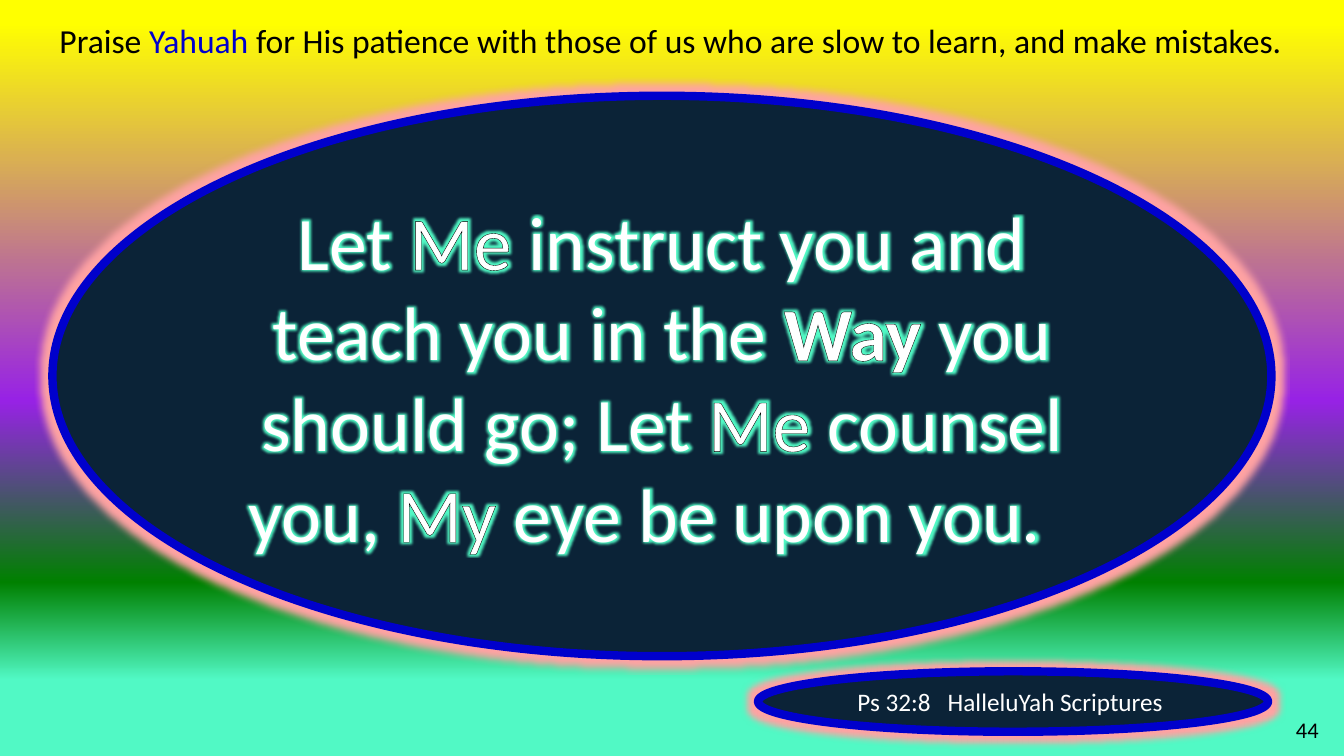
from dataclasses import dataclass

from lxml import etree
from pptx import Presentation
from pptx.dml.color import RGBColor
from pptx.enum.shapes import MSO_SHAPE
from pptx.enum.text import MSO_ANCHOR, PP_ALIGN
from pptx.oxml import parse_xml
from pptx.oxml.ns import nsdecls, qn
from pptx.util import Inches, Pt

ELLIPSE = MSO_SHAPE.OVAL
ROUNDED = MSO_SHAPE.ROUNDED_RECTANGLE
MIDDLE = MSO_ANCHOR.MIDDLE
CENTER = PP_ALIGN.CENTER
RIGHT = PP_ALIGN.RIGHT


@dataclass(frozen=True)
class Theme:
    font: str = "Calibri"
    navy: str = "0B2337"
    blue: str = "0000CC"
    white: str = "FFFFFF"
    black: str = "000000"
    mint: str = "51F9C5"
    pink: str = "FFA3A3"
    sky: tuple = ((3, "FFFF00"), (53, "9722E5"), (77, "008000"), (90, "51F9C5"))
    verse_size: int = 54
    praise_size: int = 24
    source_size: int = 18
    number_size: int = 16
    border: int = 6
    outline: float = 0.75
    shape_glow: int = 10
    text_glow: int = 5


class VerseSlide:
    """Draws styled elements on one slide, placed on a 100 by 100 grid."""

    def __init__(self, presentation, theme):
        self.theme = theme
        self.column = presentation.slide_width / 100
        self.row = presentation.slide_height / 100
        self.slide = presentation.slides.add_slide(presentation.slide_layouts[6])

    def place(self, left, top, width, height):
        return (round(left * self.column), round(top * self.row),
                round(width * self.column), round(height * self.row))

    def background(self):
        fill = self.slide.background.fill
        fill.gradient()
        fill.gradient_angle = 270
        stops = self.slide.element.find(".//" + qn("a:gsLst"))
        for stop in list(stops):
            stops.remove(stop)
        for position, color in self.theme.sky:
            stop = etree.SubElement(stops, qn("a:gs"), pos=str(position * 1000))
            etree.SubElement(stop, qn("a:srgbClr"), val=color)

    def glow(self, color, radius):
        return parse_xml(
            f'<a:effectLst {nsdecls("a")}><a:glow rad="{Pt(radius)}">'
            f'<a:srgbClr val="{color}"/></a:glow></a:effectLst>')

    def outline(self, run):
        properties = run.font._element
        properties.insert(0, parse_xml(
            f'<a:ln {nsdecls("a")} w="{Pt(self.theme.outline)}"><a:solidFill>'
            f'<a:srgbClr val="{self.theme.black}"/></a:solidFill></a:ln>'))

    def add_text(self, shape, pieces, size, color, alignment=CENTER, glowing=False):
        frame = shape.text_frame
        frame.word_wrap = True
        frame.vertical_anchor = MIDDLE
        paragraph = frame.paragraphs[0]
        paragraph.alignment = alignment
        for text, style in pieces:
            run = paragraph.add_run()
            run.text = text
            run.font.name = self.theme.font
            run.font.size = Pt(size)
            run.font.bold = style.get("bold", False)
            run.font.color.rgb = RGBColor.from_string(style.get("color", color))
            if glowing:
                solid = run.font._element.find(qn("a:solidFill"))
                solid.addnext(self.glow(self.theme.mint, self.theme.text_glow))
            if style.get("outlined"):
                self.outline(run)

    def oval(self, area, pieces, size, glowing=False):
        shape = self.slide.shapes.add_shape(ELLIPSE, *self.place(*area))
        shape.fill.solid()
        shape.fill.fore_color.rgb = RGBColor.from_string(self.theme.navy)
        shape.line.color.rgb = RGBColor.from_string(self.theme.blue)
        shape.line.width = Pt(self.theme.border)
        line = shape.element.spPr.find(qn("a:ln"))
        line.addnext(self.glow(self.theme.pink, self.theme.shape_glow))
        self.add_text(shape, pieces, size, self.theme.white, glowing=glowing)

    def banner(self, area, pieces, size):
        shape = self.slide.shapes.add_shape(ROUNDED, *self.place(*area))
        shape.shadow.inherit = False
        shape.fill.background()
        shape.line.fill.background()
        self.add_text(shape, pieces, size, self.theme.black)

    def label(self, area, text, size):
        box = self.slide.shapes.add_textbox(*self.place(*area))
        self.add_text(box, [(text, {})], size, self.theme.black, RIGHT)


def main():
    presentation = Presentation()
    presentation.slide_width = Inches(13.33)
    presentation.slide_height = Inches(7.5)
    theme = Theme()
    page = VerseSlide(presentation, theme)
    outlined = {"outlined": True}
    verse = [
        ("Let ", {}),
        ("Me", outlined),
        (" instruct you and teach you in the ", {}),
        ("Way", {"outlined": True, "bold": True}),
        (" you should go; Let ", {}),
        ("Me", outlined),
        (" counsel you, ", {}),
        ("My", outlined),
        (" eye be upon you.  ", {}),
    ]
    praise = [
        ("Praise ", {}),
        ("Yahuah", {"color": theme.blue}),
        (" for His patience with those of us who are slow to learn, "
         "and make mistakes. ", {}),
    ]
    source = [("Ps 32:8   HalleluYah Scriptures ", {})]

    page.background()
    page.label((94.35, 93.73, 4.5, 5.47), "44", theme.number_size)
    page.oval((3.9, 12.67, 90.7, 74.13), verse, theme.verse_size, glowing=True)
    page.oval((56.4, 88.8, 37.95, 8), source, theme.source_size)
    page.banner((2.85, 1.07, 94.65, 8.4), praise, theme.praise_size)
    presentation.save("out.pptx")


if __name__ == "__main__":
    main()
